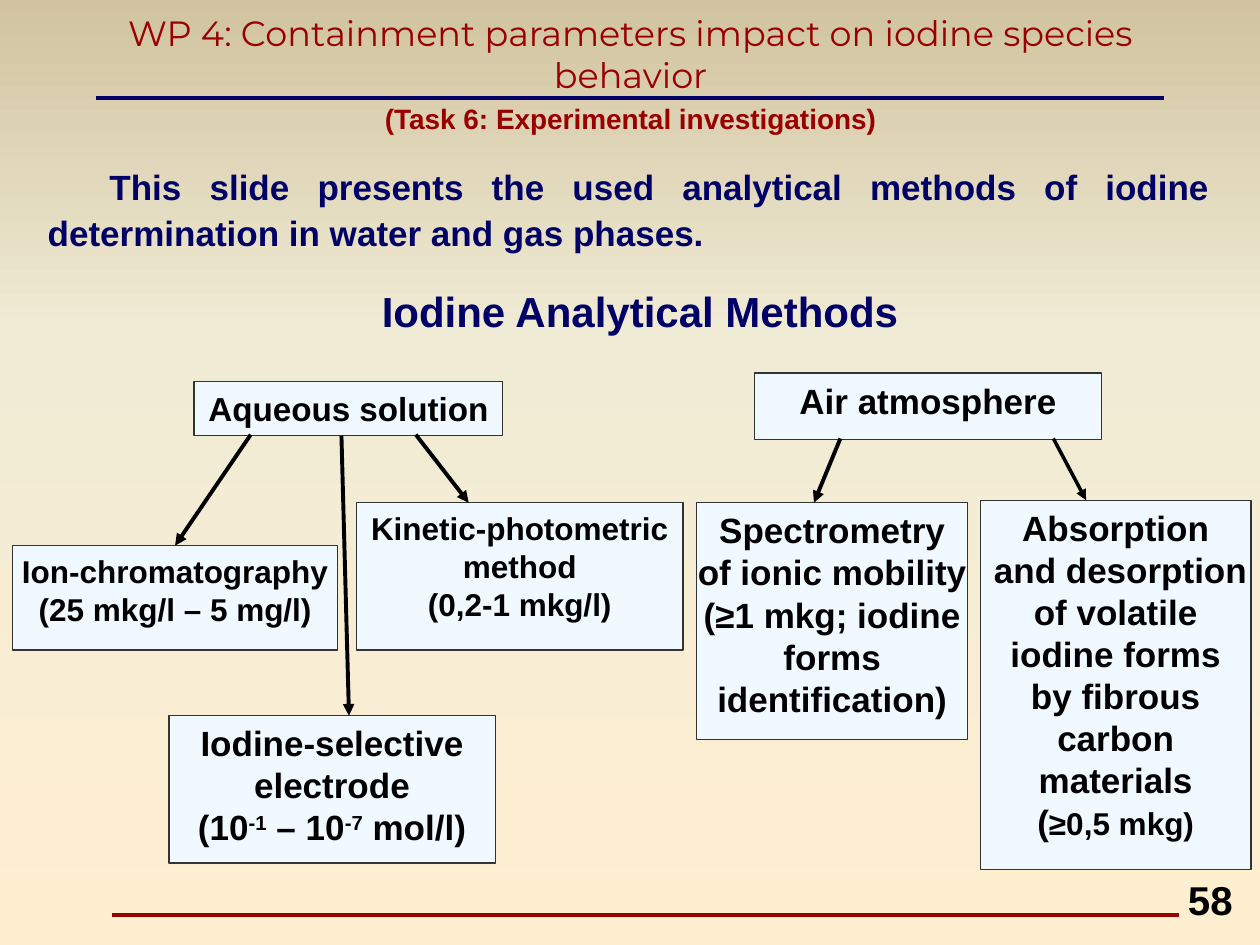
from copy import deepcopy
from dataclasses import dataclass

from lxml import etree
from pptx import Presentation
from pptx.dml.color import RGBColor
from pptx.enum import shapes, text
from pptx.oxml import ns
from pptx.util import Inches, Pt


@dataclass(frozen=True)
class Theme:
    """Colours, fonts and type sizes of the slide."""
    navy: str = "000066"
    red: str = "990000"
    ink: str = "000000"
    edge: str = "333333"
    pale: str = "EFF9FF"
    back: tuple = ((0, "D1C39F"), (0.35, "F0EBD5"), (1, "FFEFD1"))
    body: str = "Arial"
    title: str = "Montserrat"
    note: int = 16
    small: int = 18
    root: int = 19
    main: int = 20
    page: int = 23
    large: int = 24


T = Theme()
MID = text.PP_ALIGN.CENTER


def rgb(code):
    """Turn a hex code into a colour."""
    return RGBColor.from_string(code)


def shift(box, at):
    """Place a relative rectangle inside a box, in inches."""
    return [Inches(n) for n in (box[0] + at[0], box[1] + at[1], *at[2:])]


def write(frame, lines, size, color=T.ink, font=T.body, bold=True,
          align=MID, wrap=True, indent=0, space=None):
    """Fill a frame with lines, each a list of (text, size, superscript) runs."""
    frame.word_wrap = wrap
    for i, line in enumerate(lines):
        para = frame.paragraphs[0] if i == 0 else frame.add_paragraph()
        para.alignment = align
        if space:
            para.line_spacing = space
        if indent:
            para._p.get_or_add_pPr().set("indent", str(Inches(indent)))
        for part in [(line,)] if isinstance(line, str) else line:
            words, pts, sup = (*part, None, False)[:3] if len(part) < 3 else part
            run = para.add_run()
            run.text = words
            run.font.name, run.font.bold = font, bold
            run.font.size = Pt(pts or size)
            run.font.color.rgb = rgb(color)
            if sup:
                run.font._element.set("baseline", "30000")


def label(slide, box, at, lines, size, **style):
    """Add a text box."""
    area = slide.shapes.add_textbox(*shift(box, at))
    write(area.text_frame, lines, size, **style)
    return area


def rule(slide, box, start, end, color=T.ink, width=2.25, arrow=False):
    """Add a straight line, with an arrowhead if asked."""
    ends = [Inches(box[i] + p[i]) for p in (start, end) for i in (0, 1)]
    line = slide.shapes.add_connector(shapes.MSO_CONNECTOR.STRAIGHT, *ends)
    line.line.color.rgb = rgb(color)
    line.line.width = Pt(width)
    if arrow:
        etree.SubElement(line.line._get_or_add_ln(), ns.qn("a:tailEnd"), type="triangle")
    etree.SubElement(line._element.spPr, ns.qn("a:effectLst"))
    return line


def card(slide, box, at, lines, size):
    """Add a pale framed rectangle with centred lines."""
    rect = slide.shapes.add_shape(shapes.MSO_SHAPE.RECTANGLE, *shift(box, at))
    rect.shadow.inherit = False
    rect.fill.solid()
    rect.fill.fore_color.rgb = rgb(T.pale)
    rect.line.color.rgb = rgb(T.edge)
    rect.line.width = Pt(0.75)
    rect.text_frame.vertical_anchor = text.MSO_ANCHOR.TOP
    write(rect.text_frame, lines, size, wrap=False)
    return rect


def paint(slide):
    """Give the slide its vertical gradient."""
    fill = slide.background.fill
    fill.gradient()
    fill.gradient_angle = 270
    stops = fill._fill._gradFill.gsLst
    stops.append(deepcopy(stops[0]))
    for stop, (place, color) in zip(fill.gradient_stops, T.back):
        stop.position = place
        stop.color.rgb = rgb(color)


def head(slide, box):
    """Place the title, its rule and the task line."""
    wide = box[2]
    rule(slide, box, (0.48, 0.7), (8.96, 0.7), T.navy)
    title = label(slide, box, (0, 0, wide, 0.69),
                  ["WP 4: Containment parameters impact on iodine species behavior"],
                  T.main, color=T.red, font=T.title, bold=False)
    title.text_frame.vertical_anchor = text.MSO_ANCHOR.MIDDLE
    label(slide, box, (0, 0.68, wide, 0.37),
          ["(Task 6: Experimental investigations)"], T.note, color=T.red)


def intro(slide, box):
    """Place the opening sentence and the diagram heading."""
    style = dict(color=T.navy, indent=0.49, space=1.1)
    label(slide, box, (0, 0, box[2], 0.83),
          ["This slide presents the used analytical methods of iodine "
           "determination in water and gas phases."],
          T.main, align=text.PP_ALIGN.JUSTIFY, **style)
    label(slide, box, (1.45, 0.95, 6.21, 0.54),
          ["Iodine Analytical Methods"], T.large, **style)


def tree(slide, box, root, leaves):
    """Place a root card and its leaves, each with an arrow from the root."""
    card(slide, box, *root)
    for at, lines, size, start, end, width, join in leaves:
        leaf = card(slide, box, at, lines, size)
        line = rule(slide, box, start, end, width=width, arrow=True)
        if join:
            line.end_connect(leaf, 0)


def foot(slide, box):
    """Place the bottom rule and the page number."""
    rule(slide, box, (0, 0.36), (8.47, 0.36), T.red)
    label(slide, box, (8.44, 0, 0.56, 0.48), ["58"], T.page,
          align=text.PP_ALIGN.LEFT, wrap=False)


WATER = [
    ((0, 1.3, 2.58, 0.83), ["Ion-chromatography", "(25 mkg/l – 5 mg/l)"],
     T.small, (1.89, 0.42), (1.32, 1.3), 2.25, True),
    ((2.73, 0.96, 2.59, 1.17), ["Kinetic-photometric", "method", "(0,2-1 mkg/l)"],
     T.small, (3.2, 0.42), (3.62, 0.96), 2.25, False),
    ((1.24, 2.65, 2.59, 1.17),
     ["Iodine-selective", "electrode",
      [("(10",), ("-1", None, True), (" – 10",), ("-7", None, True), (" mol/l)",)]],
     T.main, (2.61, 0.43), (2.67, 2.65), 2.25, False),
]
AIR = [
    ((0, 1.03, 2.15, 1.88),
     ["Spectrometry", "of ionic mobility", "(≥1 mkg; iodine", "forms", "identification)"],
     T.main, (1.14, 0.52), (0.93, 1.03), 2.25, False),
    ((2.25, 1.01, 2.15, 2.93),
     ["Absorption", " and desorption", "of volatile", "iodine forms", "by fibrous",
      "carbon", "materials", [("(",), ("≥0,5 mkg)", T.small)]],
     T.main, (2.83, 0.52), (3.09, 1.01), 2, False),
]


def main():
    """Build and save the slide."""
    deck = Presentation()
    deck.slide_width, deck.slide_height = Inches(10), Inches(7.5)
    slide = deck.slides.add_slide(deck.slide_layouts[6])
    paint(slide)
    head(slide, (0.28, 0.08, 9.45, 1.05))
    intro(slide, (0.28, 1.23, 9.42, 1.49))
    tree(slide, (0.1, 3.03, 5.32, 3.82),
         ((1.44, 0, 2.45, 0.43), ["Aqueous solution"], T.root), WATER)
    tree(slide, (5.53, 2.96, 4.4, 3.94),
         ((0.46, 0, 2.75, 0.53), ["Air atmosphere"], T.main), AIR)
    foot(slide, (0.89, 6.9, 9, 0.48))
    deck.save("out.pptx")


if __name__ == "__main__":
    main()
